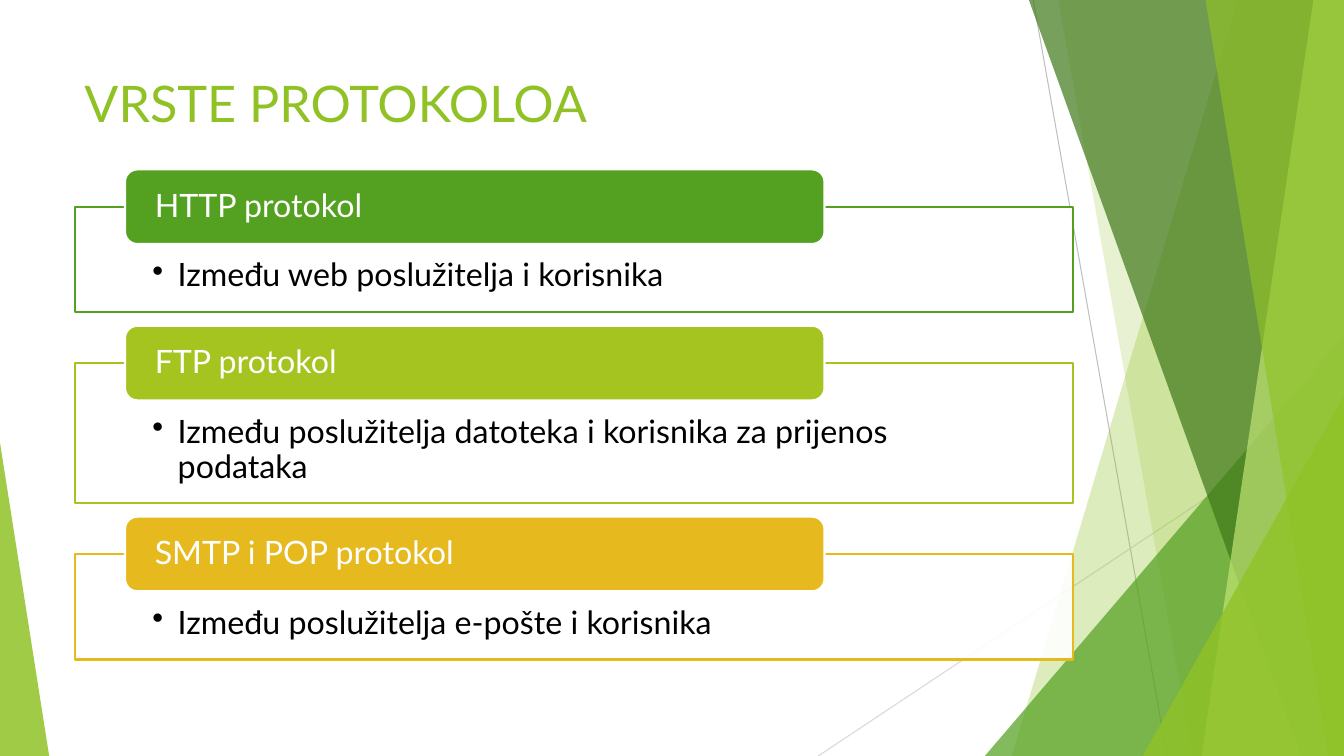
from dataclasses import dataclass

from lxml.etree import SubElement
from pptx import Presentation
from pptx.dml.color import RGBColor
from pptx.enum.shapes import MSO_CONNECTOR, MSO_SHAPE
from pptx.enum.text import MSO_ANCHOR, PP_ALIGN
from pptx.oxml.ns import qn
from pptx.util import Cm, Pt

TITLE = "VRSTE PROTOKOLOA"
# heading, description, colour, panel height
PROTOCOLS = [
    ("HTTP protokol", "Između web poslužitelja i korisnika", "54A021", 2.66),
    ("FTP protokol", "Između poslužitelja datoteka i korisnika za prijenos podataka", "A5C41F", 3.53),
    ("SMTP i POP protokol", "Između poslužitelja e-pošte i korisnika", "E6B91E", 2.66),
]


@dataclass(frozen=True)
class Theme:
    font: str = "Lato"
    title_size: float = 36
    body_size: float = 23
    green: str = "90C226"
    mid_green: str = "54A021"
    dark_green: str = "3F7819"
    pale_green: str = "C0E474"
    white: str = "FFFFFF"
    black: str = "000000"
    gray: str = "BFBFBF"
    light_gray: str = "D9D9D9"


THEME = Theme()
WIDTH, HEIGHT = 33.87, 19.05

# start, end, colour
RAYS = [
    ((26.04, 0), (29.41, HEIGHT), THEME.gray),
    ((WIDTH, 10.24), (20.62, HEIGHT), THEME.light_gray),
]
# Bands reach the right edge: left edge at the top, left edge at the bottom, colour, opacity
BACK_BANDS = [(31.19, 25.5, THEME.green, 30), (26.67, 30.05, THEME.green, 20)]
FRONT_BANDS = [
    (25.93, 32.79, THEME.dark_green, 70),
    (33.1, 30.28, THEME.pale_green, 70),
    (30.38, 33.48, THEME.green, 65),
]
# Wedges stand on the bottom edge: left, right, top, apex position, colour, opacity
BACK_WEDGE = (24.82, WIDTH, 8.46, 1, THEME.mid_green, 72)
FRONT_WEDGES = [
    (28.8, WIDTH, 9.98, 1, THEME.green, 80),
    (0, 1.24, 11.15, 0, THEME.green, 85),
]

PANEL_LEFT, PANEL_TOP, PANEL_WIDTH, PANEL_GAP = 1.88, 5.21, 25.17, 1.28
TAB_LEFT, TAB_WIDTH, TAB_HEIGHT = 3.15, 17.63, 1.88


def paint(shape, fill, opacity=100, line=None):
    shape.shadow.inherit = False
    shape.fill.solid()
    shape.fill.fore_color.rgb = RGBColor.from_string(fill)
    if opacity < 100:
        color = shape.element.spPr.find(qn("a:solidFill")).find(qn("a:srgbClr"))
        SubElement(color, qn("a:alpha"), val=str(opacity * 1000))
    if line:
        shape.line.color.rgb = RGBColor.from_string(line)
        shape.line.width = Pt(1.5)
    else:
        shape.line.fill.background()


def write(shape, text, *, size, color, insets, anchor=MSO_ANCHOR.TOP, spacing=0.9, bullet=False):
    """Fill a shape with one paragraph; insets are left, top, right, bottom in cm."""
    frame = shape.text_frame
    frame.word_wrap = True
    frame.vertical_anchor = anchor
    frame.margin_left, frame.margin_top, frame.margin_right, frame.margin_bottom = map(Cm, insets)
    paragraph = frame.paragraphs[0]
    paragraph.alignment = PP_ALIGN.LEFT
    paragraph.line_spacing = spacing
    run = paragraph.add_run()
    run.text = text
    run.font.name = THEME.font
    run.font.size = Pt(size)
    run.font.color.rgb = RGBColor.from_string(color)
    if bullet:
        properties = paragraph._p.get_or_add_pPr()
        properties.set("marL", str(Cm(0.64)))
        properties.set("indent", str(Cm(-0.64)))
        SubElement(properties, qn("a:buChar"), char="•")


def add_ray(slide, start, end, color):
    ray = slide.shapes.add_connector(MSO_CONNECTOR.STRAIGHT, *map(Cm, start + end))
    ray.line.color.rgb = RGBColor.from_string(color)
    ray.line.width = Pt(0.75)
    SubElement(ray._element.spPr, qn("a:effectLst"))


def add_band(slide, top_left, bottom_left, color, opacity):
    builder = slide.shapes.build_freeform(Cm(top_left), 0)
    corners = [(WIDTH, 0), (WIDTH, HEIGHT), (bottom_left, HEIGHT)]
    builder.add_line_segments([(Cm(x), Cm(y)) for x, y in corners], close=True)
    paint(builder.convert_to_shape(), color, opacity)


def add_wedge(slide, left, right, top, apex, color, opacity):
    wedge = slide.shapes.add_shape(
        MSO_SHAPE.ISOSCELES_TRIANGLE, Cm(left), Cm(top), Cm(right - left), Cm(HEIGHT - top))
    wedge.adjustments[0] = apex
    paint(wedge, color, opacity)


def add_backdrop(slide):
    for ray in RAYS:
        add_ray(slide, *ray)
    for band in BACK_BANDS:
        add_band(slide, *band)
    add_wedge(slide, *BACK_WEDGE)
    for band in FRONT_BANDS:
        add_band(slide, *band)
    for wedge in FRONT_WEDGES:
        add_wedge(slide, *wedge)


def add_protocol(slide, top, heading, description, color, height):
    panel = slide.shapes.add_shape(
        MSO_SHAPE.RECTANGLE, Cm(PANEL_LEFT), Cm(top), Cm(PANEL_WIDTH), Cm(height))
    paint(panel, THEME.white, opacity=90, line=color)
    write(panel, description, size=THEME.body_size, color=THEME.black,
          insets=(1.96, 1.32, 1.96, 0.46), bullet=True)
    tab = slide.shapes.add_shape(
        MSO_SHAPE.ROUNDED_RECTANGLE, Cm(TAB_LEFT), Cm(top - TAB_HEIGHT / 2),
        Cm(TAB_WIDTH), Cm(TAB_HEIGHT))
    paint(tab, color, line=THEME.white)
    write(tab, heading, size=THEME.body_size, color=THEME.white,
          insets=(0.66, 0, 0.66, 0), anchor=MSO_ANCHOR.MIDDLE)


def main():
    presentation = Presentation()
    presentation.slide_width, presentation.slide_height = Cm(WIDTH), Cm(HEIGHT)
    slide = presentation.slides.add_slide(presentation.slide_layouts[6])
    add_backdrop(slide)
    title = slide.shapes.add_textbox(Cm(1.88), Cm(1.7), Cm(23.88), Cm(3.66))
    write(title, TITLE, size=THEME.title_size, color=THEME.green,
          insets=(0.25, 0.13, 0.25, 0.13), spacing=1.0)
    top = PANEL_TOP
    for protocol in PROTOCOLS:
        add_protocol(slide, top, *protocol)
        top += protocol[-1] + PANEL_GAP
    presentation.save("out.pptx")


if __name__ == "__main__":
    main()
